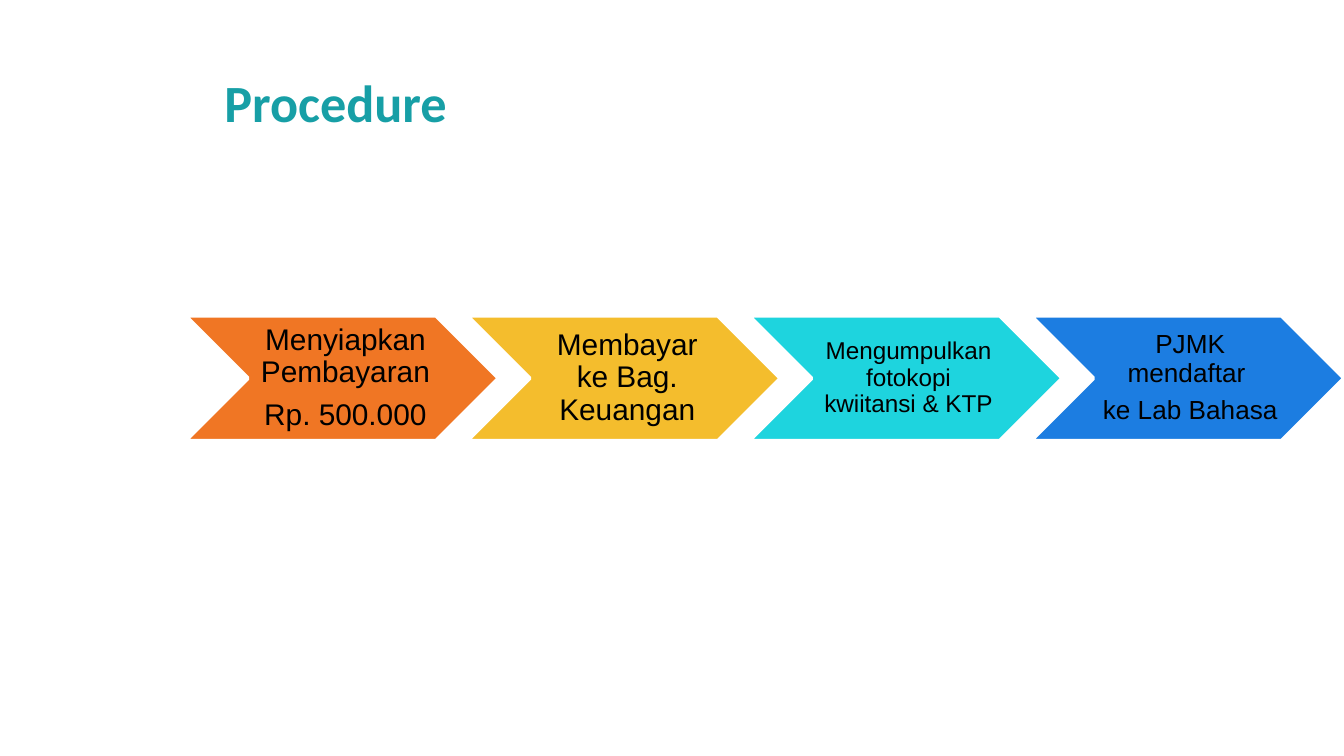
from dataclasses import dataclass

from pptx import Presentation
from pptx.dml.color import RGBColor
from pptx.enum.shapes import MSO_SHAPE
from pptx.enum.text import MSO_ANCHOR, PP_ALIGN
from pptx.shapes.group import GroupShape
from pptx.slide import Slide
from pptx.util import Inches, Pt

COLORS = {
    "title": "179FA6",
    "text": "000000",
    "outline": "FFFFFF",
    "orange": "F07624",
    "yellow": "F4BD2D",
    "cyan": "1ED4DE",
    "blue": "1C7DE1",
}

# Slide size (16:9) and the row of steps, in inches
SLIDE_WIDTH = 10
SLIDE_HEIGHT = SLIDE_WIDTH * 9 / 16
STEP_LEFT, STEP_TOP = 1.38, 2.35
STEP_WIDTH, STEP_HEIGHT = 2.33, 0.93
STEP_PITCH = 0.9 * STEP_WIDTH  # neighbours overlap by a tenth
LABEL_INDENT, LABEL_WIDTH = 0.2 * STEP_WIDTH, 0.6 * STEP_WIDTH


@dataclass(frozen=True)
class Step:
    lines: tuple[str, ...]
    color: str
    size: int
    left_inset: float


STEPS = (
    Step(("Menyiapkan Pembayaran ", "Rp. 500.000"), "orange", 16, 0.07),
    Step(("Membayar ke Bag. Keuangan",), "yellow", 16, 0.07),
    Step(("Mengumpulkan fotokopi kwiitansi & KTP",), "cyan", 13, 0.06),
    Step(("PJMK mendaftar ", "ke Lab Bahasa"), "blue", 14, 0.06),
)


def rgb(name: str) -> RGBColor:
    return RGBColor.from_string(COLORS[name])


def format_title(slide: Slide, text: str) -> None:
    title = slide.shapes.title
    title.left, title.top = Inches(1.57), Inches(0.27)
    title.width, title.height = Inches(8.39), Inches(0.97)
    frame = title.text_frame
    frame.text = text
    frame.vertical_anchor = MSO_ANCHOR.MIDDLE
    para = frame.paragraphs[0]
    para.alignment = PP_ALIGN.LEFT
    para.font.name, para.font.size, para.font.bold = "Calibri", Pt(28), True
    para.font.color.rgb = rgb("title")


def draw_chevron(group: GroupShape, step: Step, left: float) -> None:
    chevron = group.shapes.add_shape(
        MSO_SHAPE.CHEVRON, Inches(left), Inches(STEP_TOP),
        Inches(STEP_WIDTH), Inches(STEP_HEIGHT))
    chevron.shadow.inherit = False
    chevron.fill.solid()
    chevron.fill.fore_color.rgb = rgb(step.color)
    chevron.line.color.rgb = rgb("outline")
    chevron.line.width = Pt(2)


def draw_label(group: GroupShape, step: Step, left: float) -> None:
    box = group.shapes.add_textbox(
        Inches(left + LABEL_INDENT), Inches(STEP_TOP),
        Inches(LABEL_WIDTH), Inches(STEP_HEIGHT))
    frame = box.text_frame
    frame.word_wrap = True
    frame.vertical_anchor = MSO_ANCHOR.MIDDLE
    frame.margin_left = Inches(step.left_inset)
    frame.margin_right = frame.margin_top = frame.margin_bottom = Inches(0.02)
    frame.text = "\n".join(step.lines)
    for para in frame.paragraphs:
        para.alignment = PP_ALIGN.CENTER
        para.line_spacing = 0.9
        para.space_after = Pt(0.35 * step.size)
        para.font.name, para.font.size = "Arial", Pt(step.size)
        para.font.color.rgb = rgb("text")


def main() -> None:
    deck = Presentation()
    deck.slide_width, deck.slide_height = Inches(SLIDE_WIDTH), Inches(SLIDE_HEIGHT)
    title_only = deck.slide_layouts.get_by_name("Title Only")
    page = deck.slides.add_slide(title_only)

    # Heading
    format_title(page, "Procedure")

    # Process chevrons
    process = page.shapes.add_group_shape()
    for column, step in enumerate(STEPS):
        left = STEP_LEFT + column * STEP_PITCH
        draw_chevron(process, step, left)
        draw_label(process, step, left)

    deck.save("out.pptx")


if __name__ == "__main__":
    main()
